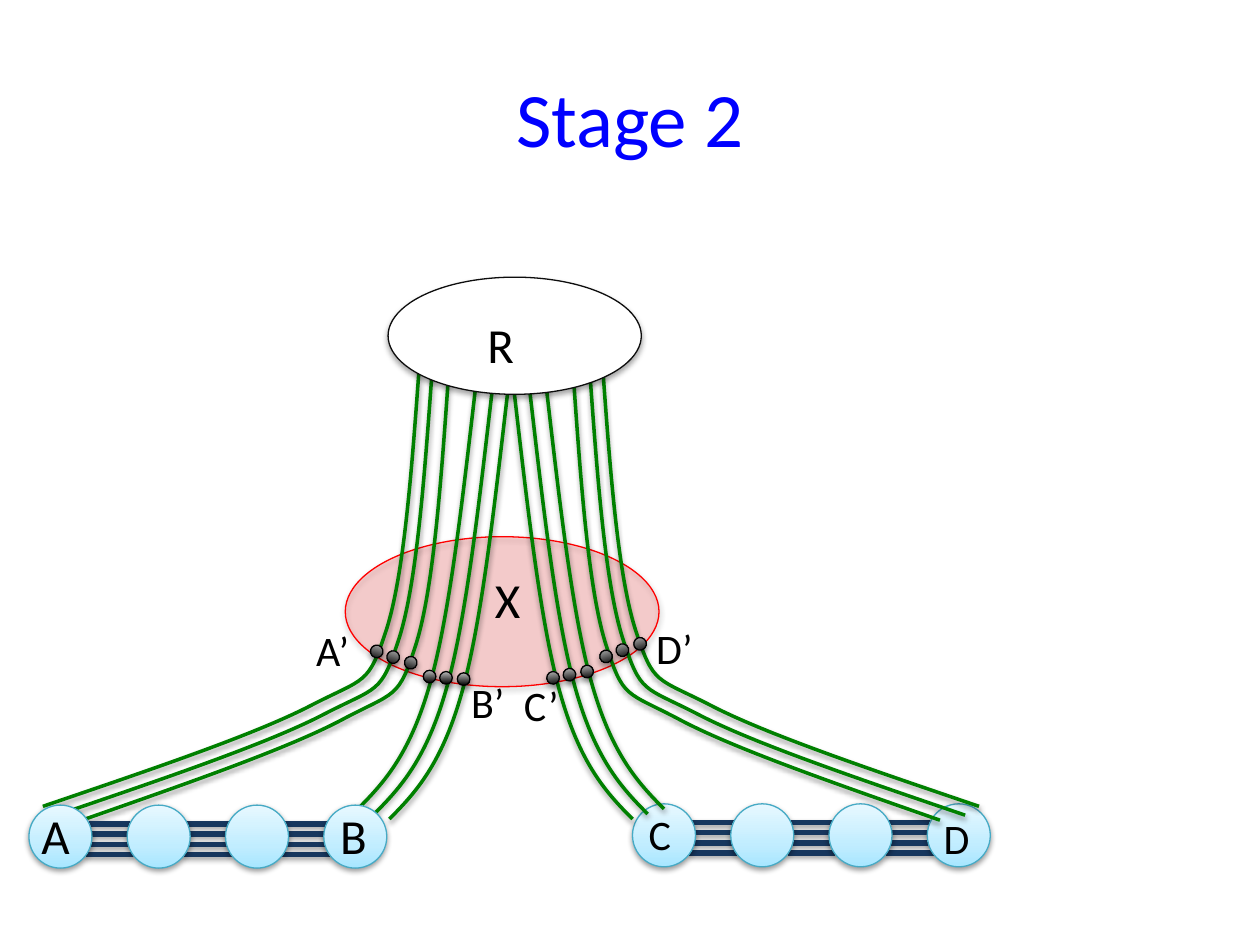
from dataclasses import dataclass

from lxml.etree import SubElement
from pptx import Presentation
from pptx.dml.color import RGBColor
from pptx.enum.shapes import MSO_CONNECTOR, MSO_SHAPE
from pptx.enum.text import MSO_ANCHOR, PP_ALIGN
from pptx.oxml.ns import qn
from pptx.util import Inches, Pt


@dataclass(frozen=True)
class Theme:
    font: str = "Calibri"
    title_size: int = 44
    large_size: int = 28
    small_size: int = 24
    title: str = "0000FF"
    text: str = "000000"
    strand: str = "008000"
    cable: str = "17375E"
    node_line: str = "46AAC5"
    node_fill: tuple = ((0, "A7E6FF"), (35, "C1EDFF"), (100, "E7F8FF"))
    dot_fill: tuple = ((0, "000000"), (100, "BDBDBD"))
    region: str = "FF0000"
    root_fill: str = "FFFFFF"
    root_line: str = "0D0D0D"


THEME = Theme()

# Bezier points in inches, as offsets inside a reference box of the given size
OUTER_STRAND = ((2.98, 3.53), (
    (0, 3.53), (0.82, 3.25), (1.65, 2.97), (2.1, 2.74), (2.56, 2.5),
    (2.57, 2.58), (2.72, 2.12), (2.86, 1.67), (2.92, 0.83), (2.98, 0)))
INNER_STRAND = ((0.95, 3.48), (
    (0, 3.48), (0.21, 3.27), (0.42, 3.04), (0.58, 2.46),
    (0.74, 1.88), (0.84, 0.94), (0.95, 0)))
STRANDS = (
    (OUTER_STRAND, (0.45, 2.94, 2.98, 3.53)),
    (OUTER_STRAND, (0.65, 2.98, 2.91, 3.53)),
    (OUTER_STRAND, (0.34, 2.87, 2.99, 3.53)),
    (INNER_STRAND, (2.84, 2.94, 0.95, 3.48)),
    (INNER_STRAND, (2.97, 2.98, 0.95, 3.48)),
    (INNER_STRAND, (3.09, 3.02, 0.95, 3.48)),
)
MIRROR_SUM = 8.11  # a left x and its mirrored x add up to this
NODE_PITCH, NODE_SIZE = 0.78, 0.5


def add_shadow(shape, distance, opacity):
    effects = SubElement(shape._element.spPr, qn("a:effectLst"))
    shadow = SubElement(effects, qn("a:outerShdw"), blurRad="40000",
                        dist=str(Pt(distance)), dir="5400000", rotWithShape="0")
    color = SubElement(shadow, qn("a:srgbClr"), val="000000")
    SubElement(color, qn("a:alpha"), val=str(opacity * 1000))


def set_line(shape, color, width):
    shape.line.color.rgb = RGBColor.from_string(color)
    shape.line.width = Pt(width)


def set_gradient(shape, stops):
    shape.fill.gradient()
    gradient = shape._element.spPr.find(qn("a:gradFill"))
    stop_list = gradient.find(qn("a:gsLst"))
    for old_stop in list(stop_list):
        stop_list.remove(old_stop)
    for position, color in stops:
        stop = SubElement(stop_list, qn("a:gs"), pos=str(position * 1000))
        SubElement(stop, qn("a:srgbClr"), val=color)
    gradient.find(qn("a:lin")).set("ang", "16200000")


def add_run(paragraph, text, size, color):
    run = paragraph.add_run()
    run.text = text
    run.font.name = THEME.font
    run.font.size = Pt(size)
    run.font.color.rgb = RGBColor.from_string(color)


def add_label(slide, text, left, top, size, width=0.58):
    height = 0.57 if size == THEME.large_size else 0.5
    label = slide.shapes.add_textbox(*map(Inches, (left, top, width, height)))
    label.text_frame.word_wrap = True
    add_run(label.text_frame.paragraphs[0], text, size, THEME.text)


def add_ellipse(slide, box, fill, line, shadow=(1.8, 35)):
    ellipse = slide.shapes.add_shape(MSO_SHAPE.OVAL, *map(Inches, box))
    if isinstance(fill, tuple):
        set_gradient(ellipse, fill)
    else:
        ellipse.fill.solid()
        ellipse.fill.fore_color.rgb = RGBColor.from_string(fill)
    set_line(ellipse, line, 0.75)
    add_shadow(ellipse, *shadow)
    return ellipse


def add_title(slide, box):
    title = slide.shapes.title
    title.left, title.top, title.width, title.height = map(Inches, box)
    title.text_frame.vertical_anchor = MSO_ANCHOR.MIDDLE
    paragraph = title.text_frame.paragraphs[0]
    paragraph.alignment = PP_ALIGN.CENTER
    add_run(paragraph, "Stage 2", THEME.title_size, THEME.title)


def add_region(slide, box):
    region = add_ellipse(slide, box, THEME.region, THEME.region)
    color = region._element.spPr.find(qn("a:solidFill")).find(qn("a:srgbClr"))
    SubElement(color, qn("a:alpha"), val="16000")


def add_strand(slide, curve, box, mirrored):
    (ref_width, ref_height), offsets = curve
    left, top, width, height = box
    points = []
    for dx, dy in offsets:
        x = left + dx * width / ref_width
        y = top + dy * height / ref_height
        points.append((Inches(MIRROR_SUM - x if mirrored else x), Inches(y)))
    builder = slide.shapes.build_freeform(*points[0])
    builder.add_line_segments(points[1:], close=False)
    strand = builder.convert_to_shape()

    # Each three straight segments become one Bezier segment
    outline = next(strand._element.iter(qn("a:path")))
    segments = outline.findall(qn("a:lnTo"))
    for start in range(0, len(segments), 3):
        bezier = SubElement(outline, qn("a:cubicBezTo"))
        for segment in segments[start:start + 3]:
            bezier.append(segment[0])
            outline.remove(segment)
    strand.fill.background()
    set_line(strand, THEME.strand, 2)
    add_shadow(strand, 1.6, 38)


def add_strands(slide, mirrored=False):
    for curve, box in STRANDS:
        add_strand(slide, curve, box, mirrored)


def add_chain(slide, left, top):
    """Four nodes in a row, joined by four cables in each gap."""
    for gap in range(3):
        x = left + 0.45 + gap * NODE_PITCH
        for cable_row in range(4):
            y = Inches(top + 0.15 + cable_row * 0.08)
            cable = slide.shapes.add_connector(
                MSO_CONNECTOR.STRAIGHT, Inches(x), y, Inches(x + 0.38), y)
            set_line(cable, THEME.cable, 3)
            add_shadow(cable, 1.6, 38)
    for node in range(4):
        box = (left + node * NODE_PITCH, top, NODE_SIZE, NODE_SIZE)
        add_ellipse(slide, box, THEME.node_fill, THEME.node_line, (1.6, 38))


def add_dots(slide, left, top, drop, angle):
    """Three dots along the region's edge; drop is the fall from first to last."""
    for step, dx in enumerate((0, 0.13, 0.27)):
        box = (left + dx, top + drop * step / 2, 0.1, 0.1)
        dot = add_ellipse(slide, box, THEME.dot_fill, THEME.text)
        dot.rotation = angle


def add_root(slide, left, top):
    add_ellipse(slide, (left, top, 2.01, 0.93), THEME.root_fill, THEME.root_line)
    add_label(slide, "R", left + 0.69, top + 0.25, THEME.large_size, 1.07)


def main():
    prs = Presentation()
    prs.slide_width, prs.slide_height = Inches(10), Inches(7.5)
    slide = prs.slides.add_slide(prs.slide_layouts[5])
    add_title(slide, (0.5, 0.3, 9, 1.25))
    add_region(slide, (2.74, 4.26, 2.49, 1.19))

    # Left half
    add_strands(slide)
    add_chain(slide, 0.23, 6.39)
    add_label(slide, "A", 0.23, 6.34, THEME.large_size, 0.79)
    add_label(slide, "B", 2.6, 6.34, THEME.large_size, 0.79)
    add_dots(slide, 3.36, 5.32, 0.02, 0)
    add_dots(slide, 2.94, 5.12, 0.09, 16.3)
    add_label(slide, "A’", 2.41, 4.91, THEME.small_size)
    add_label(slide, "B’", 3.64, 5.32, THEME.small_size)

    # Right half
    add_chain(slide, 5.02, 6.38)
    add_label(slide, "C", 5.05, 6.37, THEME.small_size)
    add_label(slide, "D", 7.39, 6.4, THEME.small_size)
    add_strands(slide, mirrored=True)
    add_dots(slide, 4.76, 5.16, -0.1, 343.7)
    add_dots(slide, 4.34, 5.33, -0.05, 352.7)
    add_label(slide, "C’", 4.06, 5.34, THEME.small_size)
    add_label(slide, "D’", 5.11, 4.89, THEME.small_size)

    # Region label and root
    add_label(slide, "X", 3.83, 4.47, THEME.large_size, 1.07)
    add_root(slide, 3.08, 2.2)
    prs.save("out.pptx")


if __name__ == "__main__":
    main()
